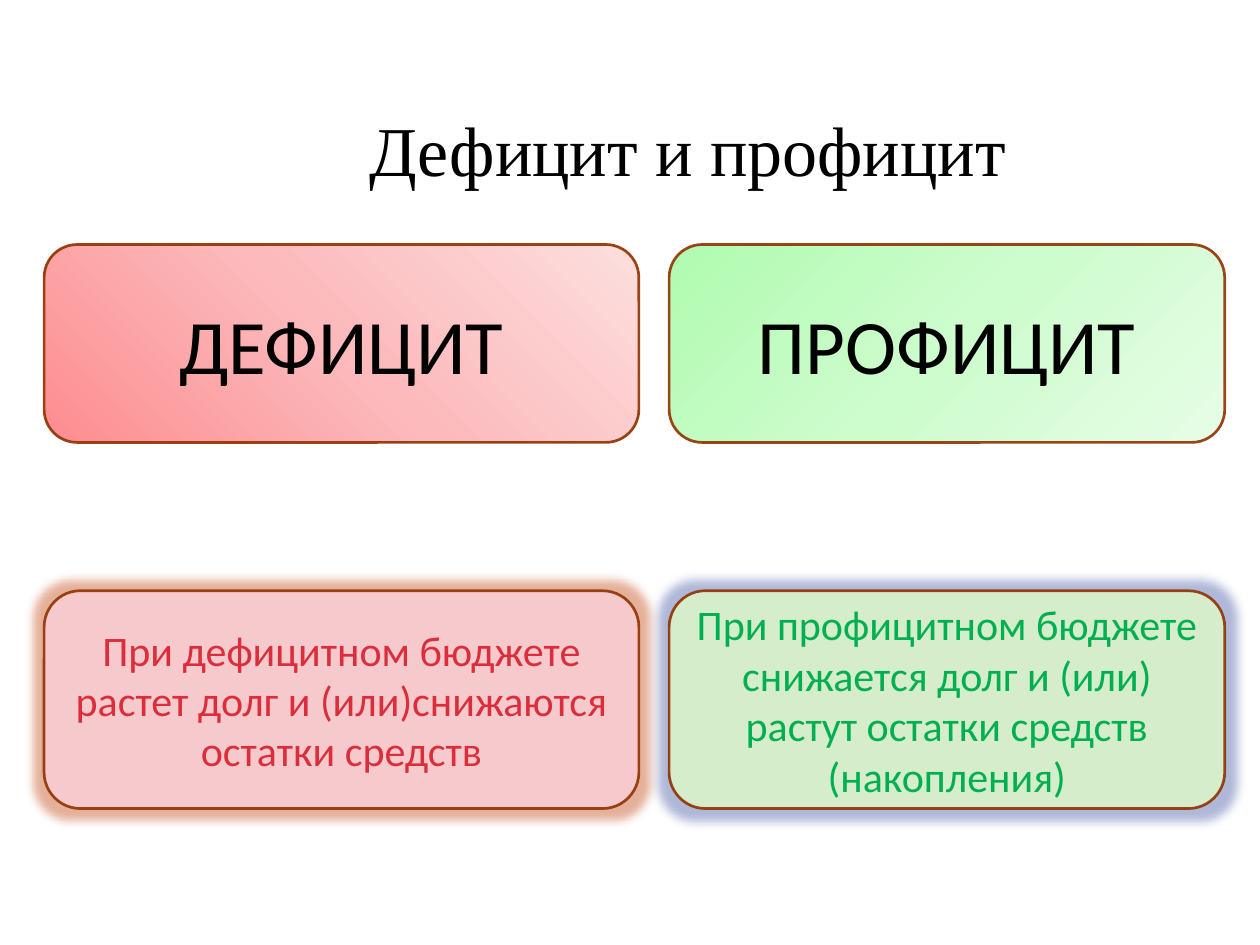
from dataclasses import dataclass

from lxml.etree import SubElement
from pptx import Presentation
from pptx.dml.color import RGBColor
from pptx.enum.shapes import MSO_SHAPE as Preset
from pptx.enum.text import MSO_ANCHOR as Anchor, PP_ALIGN as Align
from pptx.oxml.ns import qn
from pptx.util import Cm, Pt


@dataclass(frozen=True)
class Theme:
    """Colours, fonts and type sizes of the slide."""
    ink: str = "000000"
    outline: str = "903200"
    outline_width: float = 1.54
    outline_alpha: int = 90
    glow_radius: float = 11
    glow_alpha: int = 40
    title_font: str = "Times New Roman"
    body_font: str = "Calibri"
    title_size: int = 40
    heading_size: int = 44
    body_size: int = 24


@dataclass(frozen=True)
class Balance:
    """One budget outcome: a heading card above an explanation card."""
    left: float
    width: float
    heading: str
    gradient: tuple[str, ...]
    angle: int
    effect: str
    effect_fill: str
    effect_color: str
    glow: str


THEME = Theme()
HEADING_TOP, HEADING_HEIGHT = 4.93, 3.99
EFFECT_TOP, EFFECT_HEIGHT = 11.91, 4.39
BALANCES = (
    Balance(0.89, 11.99, "ДЕФИЦИТ", ("FD8D90", "FCBABC", "FDDEDE"), 315,
            "При дефицитном бюджете растет долг и (или)снижаются остатки средств",
            "F6C9CD", "DB2E3A", "BE3A00"),
    Balance(13.49, 11.2, "ПРОФИЦИТ", ("B0FBB0", "CDFCCD", "E6FDE6"), 45,
            "При профицитном бюджете снижается долг и (или) растут остатки "
            "средств (накопления)",
            "D5EDCA", "00B050", "3A4E9E"),
)


def write(shape, text: str, *, size: int, color: str = THEME.ink,
          font: str = THEME.body_font) -> None:
    """Put centred, wrapped text into a shape."""
    frame = shape.text_frame
    frame.word_wrap = True
    frame.vertical_anchor = Anchor.MIDDLE
    paragraph = frame.paragraphs[0]
    paragraph.alignment = Align.CENTER
    run = paragraph.add_run()
    run.text = text
    run.font.name = font
    run.font.size = Pt(size)
    run.font.color.rgb = RGBColor.from_string(color)


def add_color(parent, color: str, alpha: int = 100) -> None:
    """Append an RGB colour, with its opacity in percent, to an XML element."""
    rgb = SubElement(parent, qn("a:srgbClr"), val=color)
    if alpha < 100:
        SubElement(rgb, qn("a:alpha"), val=str(alpha * 1000))


def add_card(slide, left: float, top: float, width: float, height: float):
    """Add a rounded card with the common outline and no shadow."""
    card = slide.shapes.add_shape(Preset.ROUNDED_RECTANGLE, Cm(left), Cm(top),
                                  Cm(width), Cm(height))
    card.shadow.inherit = False
    card.line.width = Pt(THEME.outline_width)
    card.line.fill.solid()
    outline = card.line.fill._xPr.find(qn("a:solidFill"))
    add_color(outline, THEME.outline, THEME.outline_alpha)
    return card


def fill_gradient(card, colors: tuple[str, ...], angle: int) -> None:
    """Fill a card with evenly spaced gradient stops."""
    card.fill.gradient()
    gradient = card._element.spPr.find(qn("a:gradFill"))
    for child in list(gradient):
        gradient.remove(child)
    stops = SubElement(gradient, qn("a:gsLst"))
    for index, color in enumerate(colors):
        position = 100000 * index // (len(colors) - 1)
        add_color(SubElement(stops, qn("a:gs"), pos=str(position)), color)
    SubElement(gradient, qn("a:lin"), ang=str(angle * 60000), scaled="0")


def add_glow(card, color: str) -> None:
    """Surround a card with a soft translucent glow."""
    effects = card._element.spPr.find(qn("a:effectLst"))
    glow = SubElement(effects, qn("a:glow"), rad=str(Pt(THEME.glow_radius)))
    add_color(glow, color, THEME.glow_alpha)


def draw_balance(slide, balance: Balance) -> None:
    """Draw the heading and the explanation of one budget outcome."""
    heading = add_card(slide, balance.left, HEADING_TOP, balance.width, HEADING_HEIGHT)
    fill_gradient(heading, balance.gradient, balance.angle)
    write(heading, balance.heading, size=THEME.heading_size)

    effect = add_card(slide, balance.left, EFFECT_TOP, balance.width, EFFECT_HEIGHT)
    effect.fill.solid()
    effect.fill.fore_color.rgb = RGBColor.from_string(balance.effect_fill)
    add_glow(effect, balance.glow)
    write(effect, balance.effect, size=THEME.body_size, color=balance.effect_color)


def main() -> None:
    """Build and save the slide."""
    deck = Presentation()
    deck.slide_width, deck.slide_height = Cm(25.4), Cm(19.05)
    slide = deck.slides.add_slide(deck.slide_layouts[6])
    title = slide.shapes.add_textbox(Cm(3.63), Cm(2), Cm(20.47), Cm(2))
    write(title, "Дефицит и профицит", size=THEME.title_size, font=THEME.title_font)
    for balance in BALANCES:
        draw_balance(slide, balance)
    deck.save("out.pptx")


if __name__ == "__main__":
    main()
